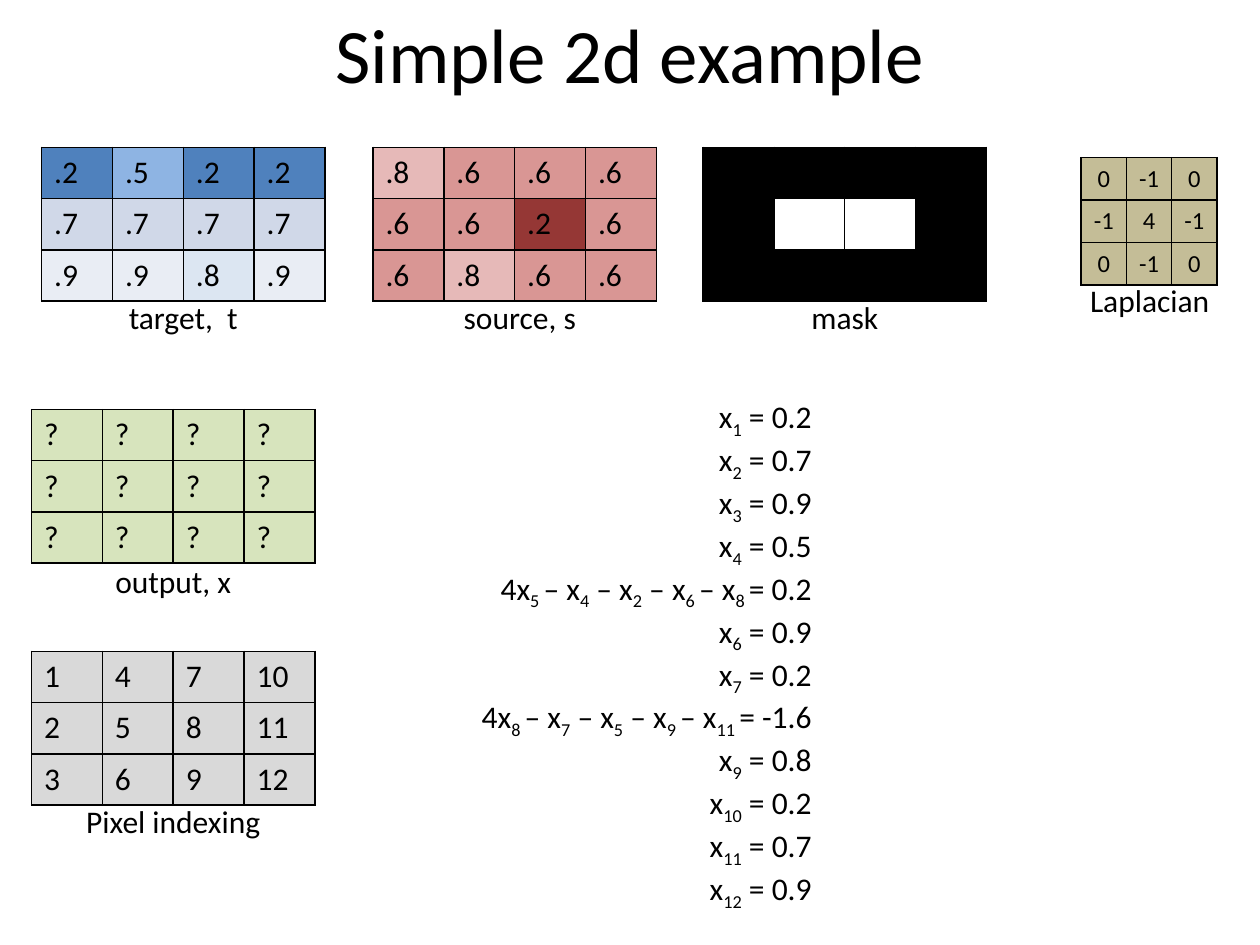
from dataclasses import dataclass

from lxml import etree
from pptx import Presentation
from pptx.dml.color import RGBColor
from pptx.enum.text import MSO_ANCHOR, PP_ALIGN
from pptx.oxml.ns import qn
from pptx.util import Inches, Pt

LEFT, CENTER, RIGHT = PP_ALIGN.LEFT, PP_ALIGN.CENTER, PP_ALIGN.RIGHT
MIDDLE = MSO_ANCHOR.MIDDLE
TITLE_ONLY = 5


@dataclass(frozen=True)
class Theme:
    font: str = "Calibri"
    title: int = 44
    body: int = 18
    small: int = 14
    border: int = 1
    black: str = "000000"
    white: str = "FFFFFF"
    output: str = "D7E4BD"
    index: str = "D9D9D9"
    laplacian: str = "C4BD97"


THEME = Theme()
TARGET_FILLS = {".2": "4F81BD", ".5": "8EB4E3", ".7": "D0D8E8", ".8": "DCE6F2", ".9": "E9EDF4"}
SOURCE_FILLS = {".2": "953735", ".6": "D99694", ".8": "E6B9B8"}

GRID_SIZE = (2.25, 1.22)
TARGET = [".2 .5 .2 .2", ".7 .7 .7 .7", ".9 .9 .8 .9"]
SOURCE = [".8 .6 .6 .6", ".6 .6 .2 .6", ".6 .8 .6 .6"]
OUTPUT = ["? ? ? ?"] * 3
INDEXING = ["1 4 7 10", "2 5 8 11", "3 6 9 12"]
LAPLACIAN = ["0 -1 0", "-1 4 -1", "0 -1 0"]
MASK = ["0 0 0 0", "0 1 1 0", "0 0 0 0"]
MASK_FILLS = {"0": THEME.black, "1": THEME.white}

# Text between a pair of underscores is a subscript.
EQUATIONS = [
    "x_1_ = 0.2",
    "x_2_ = 0.7",
    "x_3_ = 0.9",
    "x_4_ = 0.5",
    "4x_5 _– x_4_ – x_2_ – x_6 _– x_8 _= 0.2",
    "x_6_ = 0.9",
    "x_7_ = 0.2",
    "4x_8 _– x_7_ – x_5_ – x_9 _– x_11 _= -1.6",
    "x_9_ = 0.8",
    "x_10_ = 0.2",
    "x_11_ = 0.7",
    "x_12_ = 0.9",
]


def write_text(frame, *lines, size=THEME.body, color=THEME.black, align=LEFT):
    """Write one paragraph per line, with underscore pairs as subscripts."""
    for number, line in enumerate(lines):
        paragraph = frame.add_paragraph() if number else frame.paragraphs[0]
        paragraph.alignment = align
        for position, part in enumerate(line.split("_")):
            if not part:
                continue
            run = paragraph.add_run()
            run.text = part
            run.font.name = THEME.font
            run.font.size = Pt(size)
            run.font.color.rgb = RGBColor.from_string(color)
            if position % 2:
                run.font._element.set("baseline", "-25000")


def add_title(slide, text):
    title = slide.shapes.title
    title.left, title.top = Inches(0.5), Inches(-0.08)
    title.width, title.height = Inches(9), Inches(1)
    title.text_frame.vertical_anchor = MIDDLE
    write_text(title.text_frame, text, size=THEME.title, align=CENTER)


def add_text_box(slide, left, top, width, height, *lines, align=CENTER):
    box = slide.shapes.add_textbox(Inches(left), Inches(top), Inches(width), Inches(height))
    box.text_frame.word_wrap = True
    write_text(box.text_frame, *lines, align=align)


def set_borders(cell):
    properties = cell._tc.get_or_add_tcPr()
    for position, side in enumerate(("a:lnL", "a:lnR", "a:lnT", "a:lnB")):
        line = etree.Element(qn(side), w=str(Pt(THEME.border)))
        fill = etree.SubElement(line, qn("a:solidFill"))
        etree.SubElement(fill, qn("a:srgbClr"), val=THEME.black)
        properties.insert(position, line)


def add_grid(slide, left, top, rows, fills, dimensions=GRID_SIZE, show_values=True, **text_format):
    """Add a table; fills is one colour or a colour for each cell value."""
    values = [row.split() for row in rows]
    width, height = (Inches(length) for length in dimensions)
    frame = slide.shapes.add_table(
        len(values), len(values[0]), Inches(left), Inches(top), width, height
    )
    table = frame.table
    table.first_row = table.horz_banding = False
    for row_number, row in enumerate(values):
        for column_number, value in enumerate(row):
            cell = table.cell(row_number, column_number)
            color = fills[value] if isinstance(fills, dict) else fills
            cell.fill.solid()
            cell.fill.fore_color.rgb = RGBColor.from_string(color)
            set_borders(cell)
            if show_values:
                write_text(cell.text_frame, value, **text_format)


def main():
    presentation = Presentation()
    presentation.slide_width, presentation.slide_height = Inches(10), Inches(7.5)
    slide = presentation.slides.add_slide(presentation.slide_layouts[TITLE_ONLY])
    add_title(slide, "Simple 2d example")

    add_grid(slide, 0.33, 1.17, TARGET, TARGET_FILLS)
    add_grid(slide, 2.96, 1.17, SOURCE, SOURCE_FILLS)
    add_grid(slide, 5.58, 1.17, MASK, MASK_FILLS, show_values=False)
    add_grid(slide, 8.58, 1.25, LAPLACIAN, THEME.laplacian, dimensions=(1.08, 1),
             size=THEME.small, align=CENTER)
    add_grid(slide, 0.25, 3.25, OUTPUT, THEME.output)
    add_grid(slide, 0.25, 5.17, INDEXING, THEME.index)

    for left, top, width, caption in (
        (0.83, 2.32, 1.25, "target,  t"),
        (3.5, 2.32, 1.25, "source, s"),
        (6.08, 2.32, 1.25, "mask"),
        (8.5, 2.18, 1.25, "Laplacian"),
        (0.75, 4.41, 1.25, "output, x"),
        (0.25, 6.32, 2.25, "Pixel indexing"),
    ):
        add_text_box(slide, left, top, width, 0.4, caption)

    add_text_box(slide, 3.17, 3.1, 3.37, 3.74, *EQUATIONS, align=RIGHT)
    presentation.save("out.pptx")


if __name__ == "__main__":
    main()
